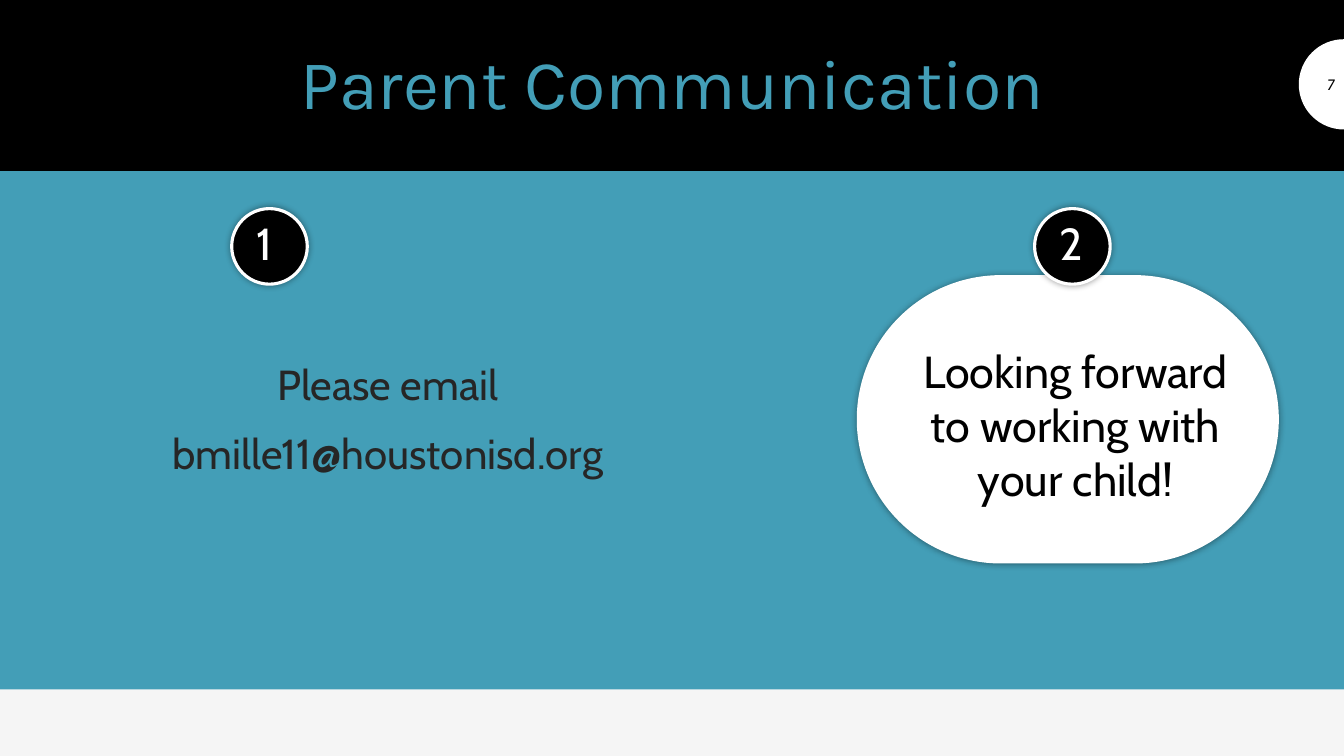
from dataclasses import dataclass
from math import cos, pi, sin

from lxml.etree import SubElement
from pptx import Presentation
from pptx.dml.color import RGBColor
from pptx.enum.shapes import MSO_SHAPE
from pptx.enum.text import MSO_ANCHOR, MSO_AUTO_SIZE, PP_ALIGN
from pptx.oxml.ns import qn
from pptx.util import Pt


@dataclass(frozen=True)
class Theme:
    paper: RGBColor = RGBColor(0xF5, 0xF5, 0xF5)
    teal: RGBColor = RGBColor(0x43, 0x9E, 0xB7)
    black: RGBColor = RGBColor(0, 0, 0)
    white: RGBColor = RGBColor(255, 255, 255)
    ink: RGBColor = RGBColor(0x26, 0x26, 0x26)
    heading_font: str = "Karla"
    body_font: str = "Cabin"
    title_size: int = 50
    message_size: int = 32
    contact_size: int = 30
    number_size: int = 12


@dataclass(frozen=True)
class Box:
    left: float
    top: float
    width: float
    height: float

    def lengths(self):
        return Pt(self.left), Pt(self.top), Pt(self.width), Pt(self.height)


THEME = Theme()
WIDTH, HEIGHT = 960, 540


def style(paragraph, size, color, font=THEME.body_font, align=PP_ALIGN.CENTER):
    paragraph.alignment = align
    paragraph.font.size = Pt(size)
    paragraph.font.name = font
    paragraph.font.color.rgb = color


def paint(shape, fill, line=None, line_width=1):
    shape.shadow.inherit = False
    shape.fill.solid()
    shape.fill.fore_color.rgb = fill
    if line is None:
        shape.line.fill.background()
    else:
        shape.line.color.rgb = line
        shape.line.width = Pt(line_width)


def add_glow(shape):
    """Surround a shape with a soft, centred black shadow."""
    effects = shape._element.spPr.find(qn("a:effectLst"))
    shadow = SubElement(effects, qn("a:outerShdw"), blurRad=str(Pt(5)),
                        dist="0", dir="0", algn="ctr", rotWithShape="0")
    color = SubElement(shadow, qn("a:srgbClr"), val=str(THEME.black))
    SubElement(color, qn("a:alpha"), val="40000")


def place(placeholder, box):
    placeholder.left, placeholder.top, placeholder.width, placeholder.height = box.lengths()
    frame = placeholder.text_frame
    frame.auto_size = MSO_AUTO_SIZE.NONE
    frame.vertical_anchor = MSO_ANCHOR.MIDDLE
    return frame


def remove_bullet(paragraph, indent=0):
    properties = paragraph._p.get_or_add_pPr()
    properties.set("marL", "0")
    properties.set("indent", str(Pt(indent)))
    SubElement(properties, qn("a:buNone"))


def add_panel(slide, box, fill, line=None):
    panel = slide.shapes.add_shape(MSO_SHAPE.RECTANGLE, *box.lengths())
    paint(panel, fill, line)


def add_header(slide, box):
    add_panel(slide, box, THEME.black, THEME.black)
    frame = place(slide.shapes.title, Box(box.left + 60, box.top + 22.5, 841, 79))
    frame.text = "Parent Communication"
    heading = frame.paragraphs[0]
    heading.line_spacing = 0.9
    style(heading, THEME.title_size, THEME.teal, THEME.heading_font)


def add_page_tab(slide, box):
    """Draw a half disc against the right edge, with the page number on it."""
    radius = box.height / 2
    right, middle = box.left + box.width, box.top + radius
    steps = 32
    arc = [(Pt(right - radius * sin(pi * step / steps)),
            Pt(middle - radius * cos(pi * step / steps)))
           for step in range(steps + 1)]
    builder = slide.shapes.build_freeform(*arc[0], scale=1.0)
    builder.add_line_segments(arc[1:], close=True)
    paint(builder.convert_to_shape(), THEME.white)

    number = slide.shapes.add_textbox(*Box(box.left, middle - 14.4, box.width, 28.8).lengths())
    frame = number.text_frame
    frame.word_wrap = True
    frame.vertical_anchor = MSO_ANCHOR.MIDDLE
    frame.text = "7"
    style(frame.paragraphs[0], THEME.number_size, THEME.black,
          THEME.heading_font, PP_ALIGN.RIGHT)
    frame.paragraphs[0].font.italic = True


def add_badge(slide, box, digit):
    disc = slide.shapes.add_shape(MSO_SHAPE.OVAL, *box.lengths())
    paint(disc, THEME.black, THEME.white, 2.25)
    add_glow(disc)
    label = slide.shapes.add_textbox(*Box(box.left + 10.5, box.top + 1.5, 26, 46).lengths())
    frame = label.text_frame
    frame.word_wrap = True
    frame.auto_size = MSO_AUTO_SIZE.SHAPE_TO_FIT_TEXT
    frame.text = digit
    style(frame.paragraphs[0], THEME.message_size, THEME.white, align=PP_ALIGN.LEFT)


def add_contact(slide, placeholder, box):
    add_badge(slide, Box(box.left + 105.5, box.top - 77, 54, 54), "1")
    frame = place(placeholder, box)
    frame.margin_bottom = Pt(44)
    frame.text = "Please email\nbmille11@houstonisd.org"
    request, address = frame.paragraphs
    remove_bullet(request)
    remove_bullet(address, indent=-39)
    request.space_before, address.space_before = Pt(0), Pt(9)
    for line in (request, address):
        line.line_spacing = 1.12
        style(line, THEME.contact_size, THEME.ink)


def add_message(slide, placeholder, box):
    bubble = slide.shapes.add_shape(MSO_SHAPE.ROUNDED_RECTANGLE, *box.lengths())
    bubble.adjustments[0] = 0.5
    paint(bubble, THEME.white)
    add_glow(bubble)
    add_badge(slide, Box(box.left + 127, box.top - 47.5, 54, 54), "2")

    frame = place(placeholder, Box(box.left + 24.5, box.top + 29.5, 263.5, 181))
    frame.margin_bottom = Pt(30)
    frame.text = "Looking forward to working with your child!"
    message = frame.paragraphs[0]
    remove_bullet(message)
    message.space_before = Pt(0)
    style(message, THEME.message_size, THEME.black)
    slide.shapes._spTree.append(placeholder._element)


def build_communication_slide(deck):
    slide = deck.slides.add_slide(deck.slide_layouts.get_by_name("Two Content"))
    slide.background.fill.solid()
    slide.background.fill.fore_color.rgb = THEME.paper
    title, contact, message = slide.placeholders

    add_panel(slide, Box(0, 121, WIDTH, 371.5), THEME.teal)
    add_header(slide, Box(0, 0, WIDTH, 121.5))
    slide.shapes._spTree.append(title._element)
    add_page_tab(slide, Box(WIDTH - 32, 28, 32, 64.5))
    add_contact(slide, contact, Box(60, 226, 434, 181))
    slide.shapes._spTree.append(contact._element)
    add_message(slide, message, Box(612, 196.5, 301.5, 206))


def main():
    deck = Presentation()
    deck.slide_width, deck.slide_height = Pt(WIDTH), Pt(HEIGHT)
    build_communication_slide(deck)
    deck.save("out.pptx")


if __name__ == "__main__":
    main()
